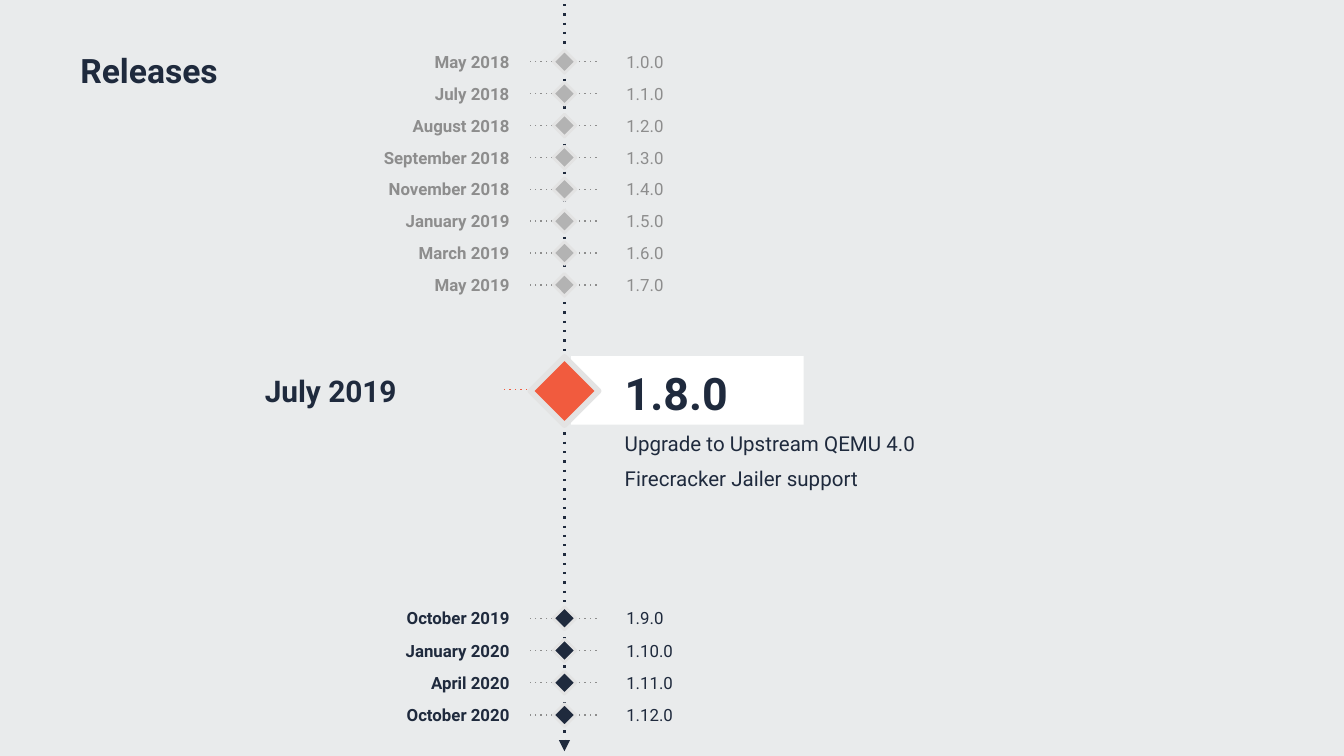
from lxml.etree import SubElement
from pptx import Presentation
from pptx.dml.color import RGBColor
from pptx.enum.shapes import MSO_CONNECTOR, MSO_SHAPE
from pptx.enum.text import MSO_ANCHOR, PP_ALIGN
from pptx.oxml.ns import qn
from pptx.util import Inches, Pt

PAST = [
    ("May 2018", "1.0.0"),
    ("July 2018", "1.1.0"),
    ("August 2018", "1.2.0"),
    ("September 2018", "1.3.0"),
    ("November 2018", "1.4.0"),
    ("January 2019", "1.5.0"),
    ("March 2019", "1.6.0"),
    ("May 2019", "1.7.0"),
]
UPCOMING = [
    ("October 2019", "1.9.0"),
    ("January 2020", "1.10.0"),
    ("April 2020", "1.11.0"),
    ("October 2020", "1.12.0"),
]
CURRENT_DATE = "July 2019"
CURRENT_VERSION = "1.8.0"
CURRENT_FEATURES = ["Upgrade to Upstream QEMU 4.0", "Firecracker Jailer support"]

THEME = {
    "font": "Roboto",
    "background": "E9EBEC",
    "navy": "1F2A3D",
    "grey": "8D8D8D",
    "grey_marker": "B3B3B3",
    "outline": "E3E3E3",
    "accent": "F15B3E",
    "white": "FFFFFF",
    "title_size": 18,
    "row_size": 9,
    "date_size": 16,
    "version_size": 24,
    "feature_size": 11,
}

AXIS = 4.2
ROW_HEIGHT = 0.25
ROW_INSETS = (0.04, 0.05, 0.04, 0.05)
BOX_INSETS = (0.1, 0.1, 0.1, 0.1)
CURRENT_Y = 2.91


def color(name):
    return RGBColor.from_string(THEME[name])


def add_text(slide, box, lines, insets=BOX_INSETS, align=PP_ALIGN.LEFT,
             anchor=MSO_ANCHOR.TOP):
    """Add a text box; each line is (text, size name, color name, bold)."""
    frame = slide.shapes.add_textbox(*map(Inches, box)).text_frame
    frame.word_wrap = True
    frame.vertical_anchor = anchor
    (frame.margin_left, frame.margin_top,
     frame.margin_right, frame.margin_bottom) = map(Inches, insets)
    for index, (text, size, ink, bold) in enumerate(lines):
        paragraph = frame.add_paragraph() if index else frame.paragraphs[0]
        paragraph.text = text
        paragraph.alignment = align
        if index:
            paragraph.space_before = Pt(6)
        font = paragraph.runs[0].font
        font.name = THEME["font"]
        font.size = Pt(THEME[size])
        font.bold = bold
        font.color.rgb = color(ink)


def add_dotted_line(slide, start, end, ink, width, arrow=False):
    line = slide.shapes.add_connector(
        MSO_CONNECTOR.STRAIGHT, *map(Inches, (*start, *end)))
    line.line.color.rgb = color(ink)
    line.line.width = Pt(width)
    properties = line._element.spPr
    outline = properties.find(qn("a:ln"))
    SubElement(outline, qn("a:prstDash"), val="dot")
    if arrow:
        SubElement(outline, qn("a:tailEnd"), type="triangle")
    SubElement(properties, qn("a:effectLst"))


def add_rectangle(slide, box, fill):
    shape = slide.shapes.add_shape(MSO_SHAPE.RECTANGLE, *map(Inches, box))
    shape.shadow.inherit = False
    shape.fill.solid()
    shape.fill.fore_color.rgb = color(fill)
    shape.line.fill.background()
    return shape


def add_diamond(slide, center_y, side, fill, outline_width):
    box = (AXIS - side / 2, center_y - side / 2, side, side)
    diamond = add_rectangle(slide, box, fill)
    diamond.rotation = 45
    diamond.line.color.rgb = color("outline")
    diamond.line.width = Pt(outline_width)


def add_releases(slide, releases, first_y, last_y, ink, marker):
    """Spread the releases evenly along the axis from first_y to last_y."""
    step = (last_y - first_y) / (len(releases) - 1)
    for index, (date, version) in enumerate(releases):
        y = first_y + index * step
        top = y - ROW_HEIGHT / 2
        add_text(slide, (2.8, top, 1.03, ROW_HEIGHT),
                 [(date, "row_size", ink, True)], ROW_INSETS, PP_ALIGN.RIGHT)
        add_text(slide, (4.62, top, 0.5, ROW_HEIGHT),
                 [(version, "row_size", ink, False)], ROW_INSETS)
        add_dotted_line(slide, (4.44, y), (3.94, y), "grey", 0.75)
        add_diamond(slide, y, 0.12, marker, 1.5)


def add_current_release(slide):
    add_dotted_line(slide, (4.25, 2.9), (3.75, 2.9), "accent", 0.75)
    add_rectangle(slide, (4.25, 2.65, 1.73, 0.51), "white")
    features = [(text, "feature_size", "navy", False) for text in CURRENT_FEATURES]
    add_text(slide, (4.55, 2.62, 4.51, 2.46),
             [(CURRENT_VERSION, "version_size", "navy", True), *features])
    add_text(slide, (1.77, 2.62, 2.08, 0.57),
             [(CURRENT_DATE, "date_size", "navy", True)],
             (0.2, 0.1, 0.1, 0.1), anchor=MSO_ANCHOR.MIDDLE)
    add_diamond(slide, CURRENT_Y, 0.36, "accent", 3)


def main():
    presentation = Presentation()
    presentation.slide_width = Inches(10)
    presentation.slide_height = Inches(10 * 9 / 16)
    slide = presentation.slides.add_slide(presentation.slide_layouts[6])
    slide.background.fill.solid()
    slide.background.fill.fore_color.rgb = color("background")

    add_text(slide, (0.5, 0.1, 2.24, 0.84),
             [("Releases", "title_size", "navy", True)], anchor=MSO_ANCHOR.MIDDLE)
    add_dotted_line(slide, (AXIS, 0.03), (AXIS, 5.59), "navy", 1.25, arrow=True)
    add_releases(slide, UPCOMING, 4.6, 5.32, "navy", "navy")
    add_releases(slide, PAST, 0.46, 2.12, "grey", "grey_marker")
    add_current_release(slide)
    presentation.save("out.pptx")


if __name__ == "__main__":
    main()
